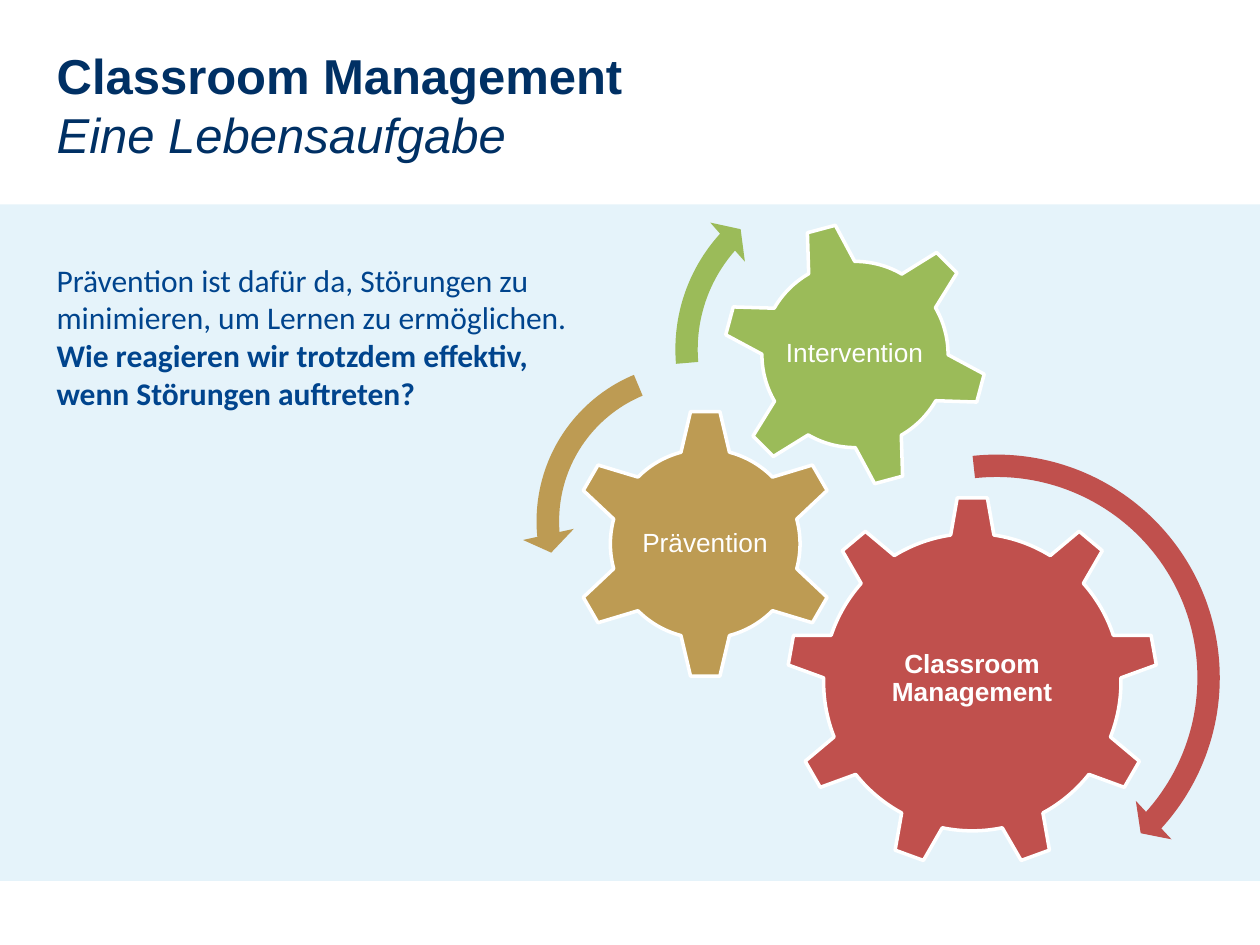
"""Build the Classroom Management slide with three interlocking gears."""
from lxml import etree
from pptx import Presentation
from pptx.dml.color import RGBColor
from pptx.enum import shapes, text
from pptx.oxml.ns import qn
from pptx.util import Pt

HUES = {"band": "008CCF", "red": "C0504D", "gold": "BD9B53", "green": "9BBB59",
        "white": "FFFFFF", "navy": "003064", "blue": "00448D"}
KIND = shapes.MSO_SHAPE


def draw(kind, box, hue):
    shape = slide.shapes.add_shape(kind, *map(Pt, box))
    shape.shadow.inherit = False
    shape.fill.solid()
    shape.fill.fore_color.rgb = RGBColor.from_string(HUES[hue])
    shape.line.fill.background()
    return shape


def style(para, face, size, hue, bold=None):
    para.font.name, para.font.size, para.font.bold = face, Pt(size), bold
    para.font.color.rgb = RGBColor.from_string(HUES[hue])


deck = Presentation()
deck.slide_width, deck.slide_height = Pt(720), Pt(540)
slide = deck.slides.add_slide(deck.slide_layouts[5])

band = draw(KIND.RECTANGLE, (0, 116.8, 720, 386.6), "band")
tint = band.fill._xPr.find(qn("a:solidFill"))[0]
etree.SubElement(tint, qn("a:alpha"), val="10000")

gears = [
    (KIND.GEAR_9, (449.4, 283.6, 212.4), 0, "red",
     "Classroom Management", (491.8, 333.4, 127.4, 109.4), True),
    (KIND.GEAR_6, (325.6, 233.4, 154.8), 0, "gold",
     "Prävention", (364.4, 272.4, 77, 76.4), False),
    (KIND.GEAR_6, (412.6, 126.6, 152), 345, "green",
     "Intervention", (445.8, 160, 85, 85), False),
]
for kind, (left, top, size), turn, hue, name, box, bold in gears:
    gear = draw(kind, (left, top, size, size), hue)
    gear.rotation = turn
    gear.line.color.rgb = RGBColor.from_string(HUES["white"])
    gear.line.width = Pt(2)
    frame = slide.shapes.add_textbox(*map(Pt, box)).text_frame
    frame.word_wrap = True
    frame.vertical_anchor = text.MSO_ANCHOR.MIDDLE
    frame.margin_left = frame.margin_right = Pt(1.5)
    frame.margin_top = frame.margin_bottom = Pt(1.5)
    label = frame.paragraphs[0]
    label.text = name
    label.alignment = text.PP_ALIGN.CENTER
    label.line_spacing = 0.9
    style(label, "Arial", 15, "white", bold)

arrows = [
    (KIND.CIRCULAR_ARROW, (433.4, 251.2, 272.2), "red",
     (0.047, 2.99, 25.31, 158.297, 0.055)),
    (KIND.LEFT_CIRCULAR_ARROW, (298.2, 198.8, 198), "gold",
     (0.065, 4.3, 104.891, 148.378, 0.075)),
    (KIND.CIRCULAR_ARROW, (377.4, 93, 213.2), "green",
     (0.06, 3.941, 133.138, 105.082, 0.07)),
]
for kind, (left, top, size), hue, bends in arrows:
    arrow = draw(kind, (left, top, size, size), hue)
    for spot, bend in enumerate(bends):
        arrow.adjustments[spot] = bend

title = slide.shapes.title
title.left, title.top, title.width, title.height = map(Pt, (25.2, 22.4, 385, 75))
frame = title.text_frame
frame.text = "Classroom Management\nEine Lebensaufgabe"
frame.auto_size = text.MSO_AUTO_SIZE.NONE
frame.vertical_anchor = text.MSO_ANCHOR.TOP
for para, bold in zip(frame.paragraphs, (True, False)):
    para.alignment = text.PP_ALIGN.LEFT
    style(para, "Arial", 28, "navy", bold)
    para.font.italic = not bold

frame = slide.shapes.add_textbox(*map(Pt, (25.2, 145.4, 322, 94.4))).text_frame
frame.word_wrap = True
para = frame.paragraphs[0]
style(para, "Calibri", 18, "blue")
para.add_run().text = ("Prävention ist dafür da, Störungen zu minimieren, "
                       "um Lernen zu ermöglichen. ")
query = para.add_run()
query.text = "Wie reagieren wir trotzdem effektiv, wenn Störungen auftreten?"
query.font.bold = True

deck.save("out.pptx")
